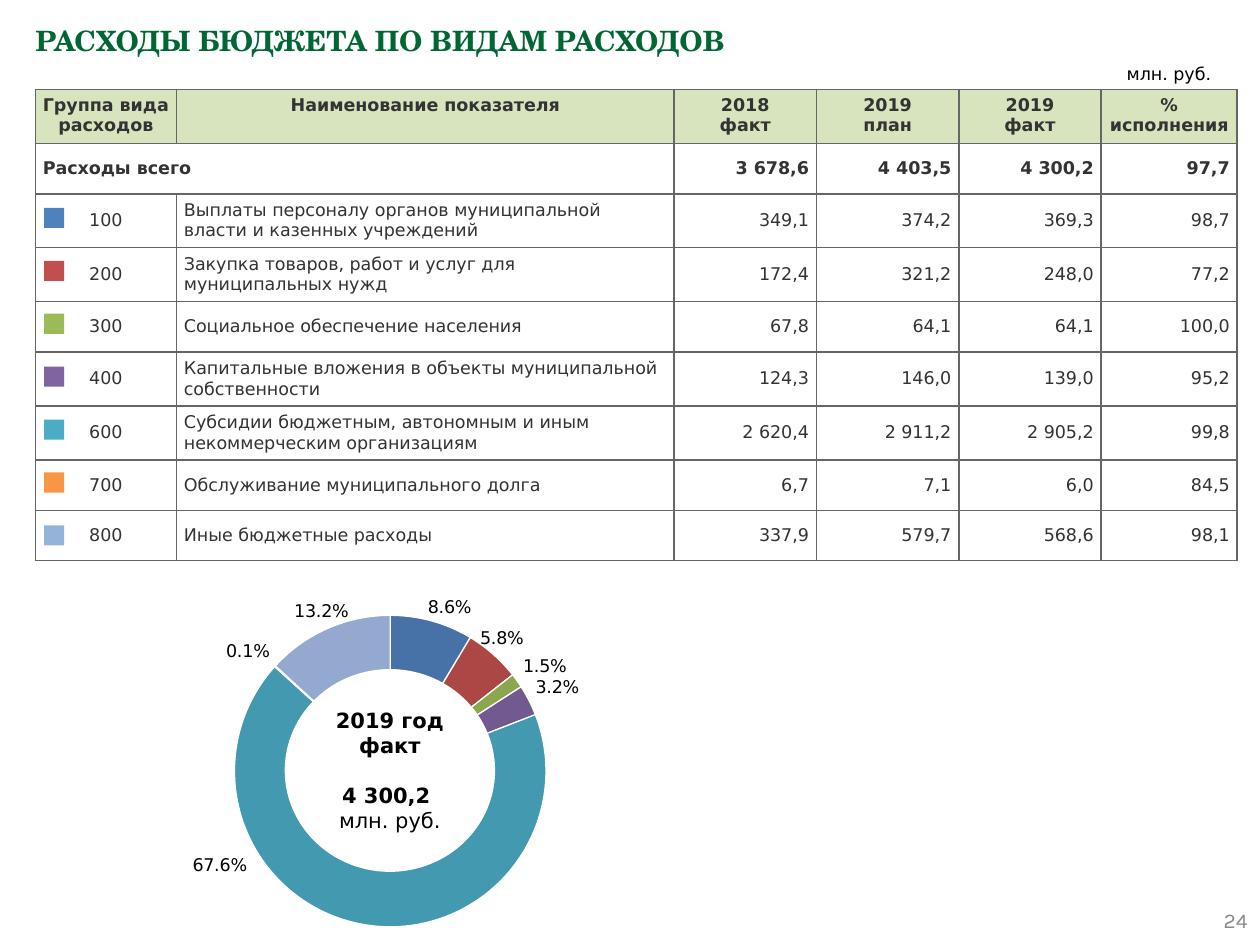
from dataclasses import dataclass

from lxml.etree import SubElement
from pptx import Presentation
from pptx.chart.data import CategoryChartData
from pptx.dml.color import RGBColor
from pptx.enum.chart import XL_CHART_TYPE as ChartType, XL_LABEL_POSITION as LabelPosition
from pptx.enum.shapes import MSO_SHAPE as Shape
from pptx.enum.text import MSO_ANCHOR as Anchor, PP_ALIGN as Align
from pptx.oxml import parse_xml
from pptx.oxml.ns import nsdecls, qn
from pptx.util import Inches, Pt


@dataclass(frozen=True)
class Theme:
    """Colours, fonts and type sizes of the slide."""
    title: str = "006633"
    ink: str = "333333"
    black: str = "000000"
    white: str = "FFFFFF"
    muted: str = "898989"
    border: str = "666666"
    header: str = "D7E4BD"
    swatches: tuple = ("4F81BD", "C0504D", "9BBB59", "8064A2", "4BACC6", "F79646", "95B3D7")
    slices: tuple = ("4672A8", "AB4744", "8AA64F", "725990", "4299B0", "DC853E", "93A9CF")
    title_font: str = "TeX Gyre Schola"
    body_font: str = "DejaVu Sans"
    number_font: str = "Karla"
    title_size: int = 16
    centre_size: int = 12
    body_size: int = 10


THEME = Theme()
HEADERS = ("Группа вида расходов", "Наименование показателя", "2018\nфакт",
           "2019\nплан", "2019\nфакт", "%\nисполнения")
TOTAL = ("Расходы всего", "", "3 678,6", "4 403,5", "4 300,2", "97,7")
EXPENSES = (
    ("100", "Выплаты персоналу органов муниципальной власти и казенных учреждений",
     "349,1", "374,2", "369,3", "98,7"),
    ("200", "Закупка товаров, работ и услуг для муниципальных нужд",
     "172,4", "321,2", "248,0", "77,2"),
    ("300", "Социальное обеспечение населения", "67,8", "64,1", "64,1", "100,0"),
    ("400", "Капитальные вложения в объекты муниципальной собственности",
     "124,3", "146,0", "139,0", "95,2"),
    ("600", "Субсидии бюджетным, автономным и иным некоммерческим организациям",
     "2 620,4", "2 911,2", "2 905,2", "99,8"),
    ("700", "Обслуживание муниципального долга", "6,7", "7,1", "6,0", "84,5"),
    ("800", "Иные бюджетные расходы", "337,9", "579,7", "568,6", "98,1"),
)
SHARES = (0.086, 0.058, 0.015, 0.032, 0.676, 0.001, 0.132)
LABEL_SHIFTS = {0: (-0.01, 0.01), 1: (-0.03, 0), 4: (-0.19, -0.19), 6: (0.04, 0)}
COLUMN_WIDTHS = (1.12, 3.95, 1.13, 1.13, 1.13, 1.08)
ROW_HEIGHTS = (0.3,) + (0.4,) * 8


def box(*lengths):
    """Turn left, top, width and height in inches into lengths."""
    return tuple(Inches(length) for length in lengths)


def apply(target, formats):
    """Set every attribute named in a dict of format values."""
    for name, value in formats.items():
        setattr(target, name, value)


def style_font(font, color, name=THEME.body_font, size=THEME.body_size, bold=False):
    """Give a font its face, size, weight and colour."""
    apply(font, {"name": name, "size": Pt(size), "bold": bold})
    font.color.rgb = RGBColor.from_string(color)


def write(frame, text, align=Align.LEFT, color=THEME.ink, **font_formats):
    """Write lines of text as paragraphs of one format."""
    frame.text = text
    for line in frame.paragraphs:
        line.alignment = align
        for run in line.runs:
            style_font(run.font, color, **font_formats)


def add_plain(slide, preset, area, fill=None):
    """Add a preset shape without line or shadow."""
    plain = slide.shapes.add_shape(preset, *area)
    plain.shadow.inherit = False
    plain.line.fill.background()
    if fill:
        plain.fill.solid()
        plain.fill.fore_color.rgb = RGBColor.from_string(fill)
    else:
        plain.fill.background()
    return plain


def add_title(slide, area):
    """Move and format the title placeholder."""
    title = slide.shapes.title
    apply(title, dict(zip(("left", "top", "width", "height"), area)))
    write(title.text_frame, "РАСХОДЫ БЮДЖЕТА ПО ВИДАМ РАСХОДОВ", color=THEME.title,
          name=THEME.title_font, size=THEME.title_size, bold=True)
    apply(title.text_frame, {"vertical_anchor": Anchor.TOP, "word_wrap": True})


def add_page_number(slide, area):
    """Place the page number in the corner."""
    frame = slide.shapes.add_textbox(*area).text_frame
    apply(frame, {"vertical_anchor": Anchor.MIDDLE, "word_wrap": True})
    write(frame, "24", Align.RIGHT, THEME.muted, name=THEME.number_font,
          size=THEME.centre_size)


def add_unit(slide, area):
    """Place the unit of measure above the table."""
    unit = add_plain(slide, Shape.PENTAGON, area)
    unit.adjustments[0] = 0
    write(unit.text_frame, "млн. руб.", Align.RIGHT, THEME.black)
    unit.text_frame.vertical_anchor = Anchor.MIDDLE


def format_cell(cell, filled):
    """Give a cell its margins, borders and fill."""
    apply(cell, {"margin_left": Inches(0.06), "margin_right": Inches(0.06),
                 "margin_top": Pt(3.4), "margin_bottom": Pt(3.4),
                 "vertical_anchor": Anchor.TOP if filled else Anchor.MIDDLE})
    properties = cell._tc.get_or_add_tcPr()
    for side in ("a:lnL", "a:lnR", "a:lnT", "a:lnB"):
        line = SubElement(properties, qn(side), w=str(Pt(1)))
        SubElement(SubElement(line, qn("a:solidFill")), qn("a:srgbClr"), val=THEME.border)
    if filled:
        cell.fill.solid()
        cell.fill.fore_color.rgb = RGBColor.from_string(THEME.header)
    else:
        cell.fill.background()


def add_expense_table(slide, area):
    """Build the table of expenses by group."""
    rows = (HEADERS, TOTAL) + EXPENSES
    table = slide.shapes.add_table(len(rows), len(HEADERS), *area).table
    apply(table, {"first_row": False, "horz_banding": False})
    for column, width in zip(table.columns, COLUMN_WIDTHS):
        column.width = Inches(width)
    for row, height in zip(table.rows, ROW_HEIGHTS):
        row.height = Inches(height)
    table.cell(1, 0).merge(table.cell(1, 1))
    alignments = (Align.CENTER, Align.LEFT) + (Align.RIGHT,) * 4
    for r, values in enumerate(rows):
        for c, value in enumerate(values):
            cell = table.cell(r, c)
            align = Align.CENTER if r == 0 else Align.LEFT if r == 1 and c == 0 else alignments[c]
            write(cell.text_frame, value, align, bold=r < 2)
            format_cell(cell, r == 0)


def add_swatches(slide, area, pitch):
    """Put a colour key beside each expense group."""
    left, top, width, height = area
    for i, color in enumerate(THEME.swatches):
        add_plain(slide, Shape.RECTANGLE, (left, top + i * pitch, width, height), color)


def manual_layout(**places):
    """Return a chart layout element with the given settings."""
    settings = "".join(f'<c:{name} val="{value}"/>' for name, value in places.items())
    return parse_xml(f'<c:layout {nsdecls("c")}><c:manualLayout>{settings}'
                     '</c:manualLayout></c:layout>')


def add_share_labels(series):
    """Label the slices outside the ring, shifting some of them."""
    labels = series.data_labels
    apply(labels, {"show_value": True, "show_percentage": False, "number_format": "0.0%",
                   "number_format_is_linked": False, "position": LabelPosition.OUTSIDE_END})
    style_font(labels.font, THEME.black)
    for leader in labels._element.findall(qn("c:showLeaderLines")):
        leader.set("val", "0")
    for i, (x, y) in LABEL_SHIFTS.items():
        label = series.points[i].data_label
        label.position = LabelPosition.OUTSIDE_END
        style_font(label.font, THEME.black)
        label._get_or_add_dLbl().insert(1, manual_layout(x=x, y=y))


def add_share_chart(slide, area):
    """Build the pie of expense shares."""
    data = CategoryChartData(number_format="0.0%")
    data.categories = [str(i + 1) for i in range(len(SHARES))]
    data.add_series("Series 1", SHARES)
    chart = slide.shapes.add_chart(ChartType.PIE, *area, data).chart
    apply(chart, {"has_title": False, "has_legend": False})
    plot = chart.plots[0]
    plot.vary_by_categories = True
    for i, color in enumerate(THEME.slices):
        style = plot.series[0].points[i].format
        style.fill.solid()
        style.fill.fore_color.rgb = RGBColor.from_string(color)
        style.line.color.rgb = RGBColor.from_string(THEME.white)
        style.line.width = Pt(0.75)
    add_share_labels(plot.series[0])
    plot_area = chart._chartSpace.chart.plotArea
    for layout in plot_area.findall(qn("c:layout")):
        plot_area.remove(layout)
    plot_area.insert(0, manual_layout(layoutTarget="inner", xMode="edge", yMode="edge",
                                      x=0.25, y=0.14, w=0.52, h=0.78))


def add_centre(slide, area):
    """Cover the middle of the pie with the yearly total."""
    frame = add_plain(slide, Shape.OVAL, area, THEME.white).text_frame
    write(frame, "2019 год\nфакт\n4 300,2 \nмлн. руб.", Align.CENTER, THEME.black,
          size=THEME.centre_size, bold=True)
    apply(frame, {"vertical_anchor": Anchor.MIDDLE, "word_wrap": True,
                  "margin_left": 0, "margin_right": 0})
    frame.paragraphs[2].space_before = Pt(14)
    frame.paragraphs[3].runs[0].font.bold = False


def main():
    """Build and save the slide."""
    deck = Presentation()
    apply(deck, {"slide_width": Inches(10), "slide_height": Inches(7.5)})
    slide = deck.slides.add_slide(deck.slide_layouts[5])
    add_title(slide, box(0.18, 0.14, 6.02, 1.15))
    add_page_number(slide, box(7.67, 7.1, 2.33, 0.4))
    add_expense_table(slide, box(0.28, 0.71, 9.55, 3.79))
    add_share_chart(slide, box(0.67, 4.44, 4.76, 3.17))
    add_centre(slide, box(2.26, 5.31, 1.67, 1.61))
    add_unit(slide, box(8.47, 0.48, 1.24, 0.21))
    add_swatches(slide, box(0.35, 1.65, 0.16, 0.16), Inches(0.42))
    deck.save("out.pptx")


if __name__ == "__main__":
    main()
